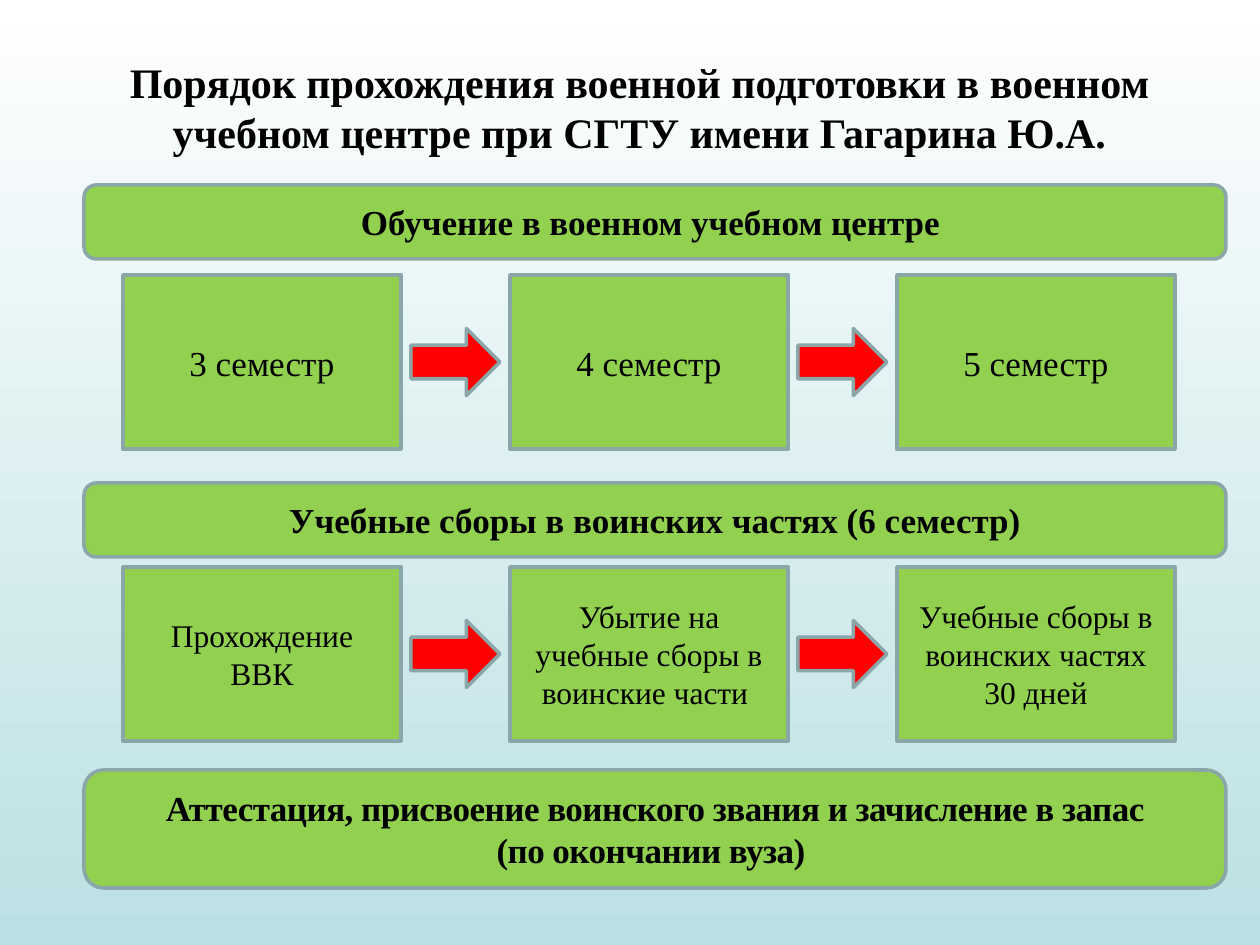
import pptx
import pptx.dml.color
import pptx.enum.shapes
import pptx.enum.text
import pptx.util

PX_PER_INCH = 126
GREEN, RED, OUTLINE, BLACK = "92D050", "FF0000", "8AA6A8", "000000"
STEP_WIDTH = 278
ARROW_WIDTH, ARROW_HEIGHT = 89, 67
PRESET = pptx.enum.shapes.MSO_SHAPE


def px(length):
    return pptx.util.Emu(round(length * 914400 / PX_PER_INCH))


def color(value):
    return pptx.dml.color.RGBColor.from_string(value)


def place(shape, box):
    for side, length in zip(("left", "top", "width", "height"), box):
        setattr(shape, side, px(length))


def write(frame, lines, size, bold=False, spacing=None):
    frame.word_wrap = True
    frame.text = "\n".join(lines)
    font_format = {"name": "Times New Roman", "size": pptx.util.Pt(size), "bold": bold}
    for paragraph in frame.paragraphs:
        paragraph.alignment = pptx.enum.text.PP_ALIGN.CENTER
        for run in paragraph.runs:
            for name, value in font_format.items():
                setattr(run.font, name, value)
            run.font.color.rgb = color(BLACK)
            if spacing is not None:
                run.font._element.set("spc", str(spacing))


def add_block(slide, preset, box, fill):
    block = slide.shapes.add_shape(preset, *map(px, box))
    block.shadow.inherit = False
    block.fill.solid()
    block.fill.fore_color.rgb = color(fill)
    block.line.color.rgb = color(OUTLINE)
    block.line.width = pptx.util.Pt(2)
    block.text_frame.vertical_anchor = pptx.enum.text.MSO_ANCHOR.MIDDLE
    return block


def paint_background(slide):
    fill = slide.background.fill
    fill.gradient()
    fill.gradient_angle = 270
    for stop, value in zip(fill.gradient_stops, ("FFFFFF", "BBE0E3")):
        stop.color.rgb = color(value)


def add_heading(slide, box, text):
    heading = slide.shapes.title
    place(heading, box)
    write(heading.text_frame, [text], 24, bold=True)
    heading.text_frame.auto_size = pptx.enum.text.MSO_AUTO_SIZE.NONE
    heading.text_frame.vertical_anchor = pptx.enum.text.MSO_ANCHOR.TOP


def add_stage(slide, box, lines, spacing=None):
    stage = add_block(slide, PRESET.ROUNDED_RECTANGLE, box, GREEN)
    write(stage.text_frame, lines, 20, bold=True, spacing=spacing)


def add_steps(slide, box, steps, size):
    """Spread the steps evenly over the box, with an arrow in each gap."""
    left, top, width, height = box
    pitch = (width - STEP_WIDTH) / (len(steps) - 1)
    arrow_offset = (pitch + STEP_WIDTH - ARROW_WIDTH) / 2
    arrow_top = top + (height - ARROW_HEIGHT) / 2
    for index, lines in enumerate(steps):
        step_left = left + index * pitch
        step = add_block(slide, PRESET.RECTANGLE, (step_left, top, STEP_WIDTH, height), GREEN)
        write(step.text_frame, lines, size)
        if index < len(steps) - 1:
            arrow_box = (step_left + arrow_offset, arrow_top, ARROW_WIDTH, ARROW_HEIGHT)
            add_block(slide, PRESET.RIGHT_ARROW, arrow_box, RED)


def main():
    deck = pptx.Presentation()
    deck.slide_width, deck.slide_height = px(1260), px(945)
    slide = deck.slides.add_slide(deck.slide_layouts.get_by_name("Title Only"))
    paint_background(slide)
    add_heading(slide, (44, 50, 1191, 115),
                "Порядок прохождения военной подготовки в военном "
                "учебном центре при СГТУ имени Гагарина Ю.А.")

    add_stage(slide, (84, 185, 1142, 74), ["Обучение в военном учебном центре "])
    add_steps(slide, (123, 275, 1052, 174),
              [["3 семестр"], ["4 семестр"], ["5 семестр"]], 20)

    add_stage(slide, (84, 483, 1142, 74), ["Учебные сборы в воинских частях (6 семестр)"])
    add_steps(slide, (123, 567, 1052, 174),
              [["Прохождение ВВК"],
               ["Убытие на учебные сборы в воинские части "],
               ["Учебные сборы в воинских частях", "30 дней"]], 18)

    add_stage(slide, (84, 770, 1142, 118),
              ["Аттестация, присвоение воинского звания и зачисление в запас",
               "(по окончании вуза) "], spacing=-30)
    deck.save("out.pptx")


if __name__ == "__main__":
    main()
